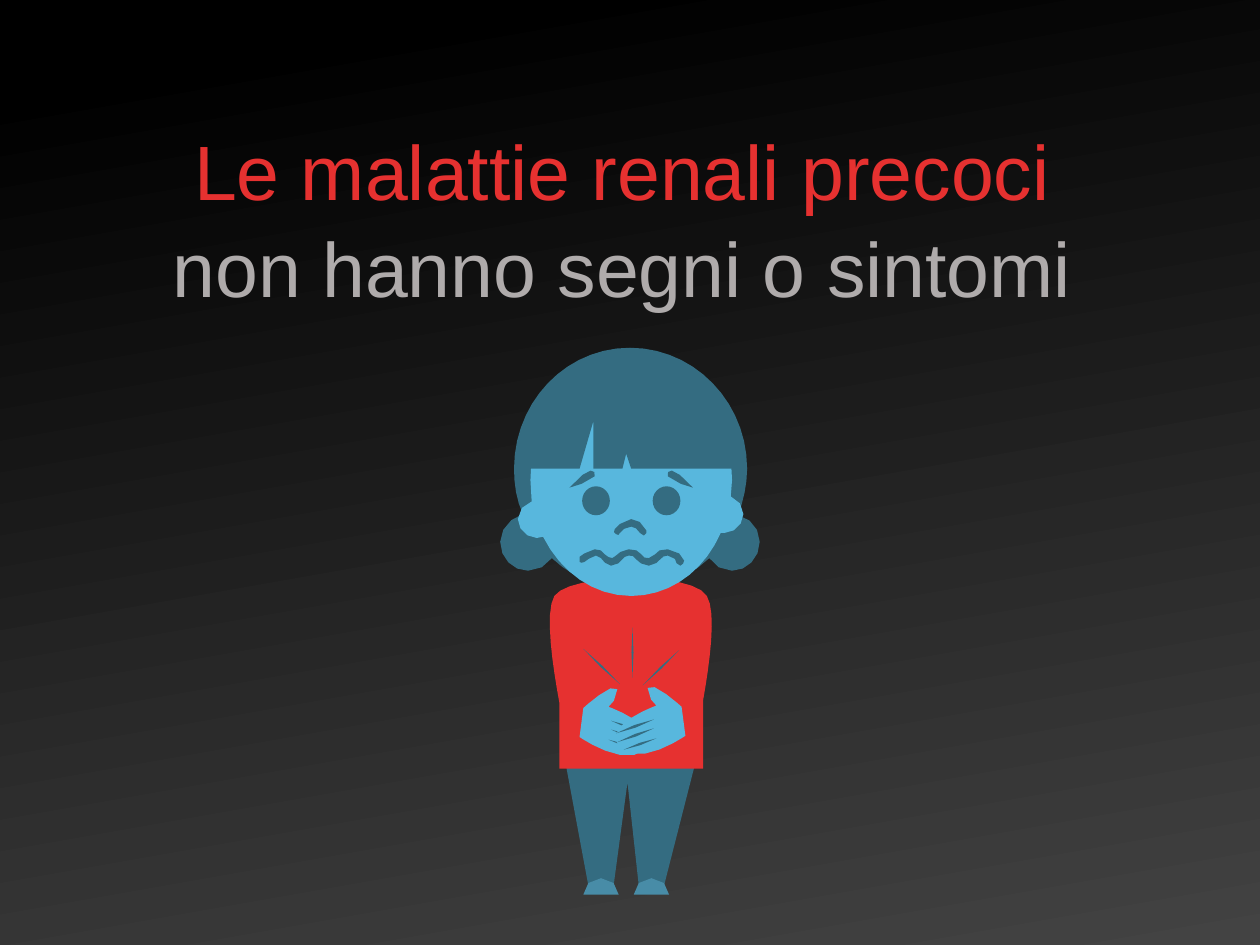
from math import ceil, dist

from pptx import Presentation
from pptx.dml.color import RGBColor
from pptx.enum.shapes import MSO_SHAPE
from pptx.enum.text import MSO_ANCHOR, MSO_AUTO_SIZE, PP_ALIGN
from pptx.util import Inches, Pt

BLACK = RGBColor(0x00, 0x00, 0x00)
CHARCOAL = RGBColor(0x43, 0x43, 0x43)
RED = RGBColor(0xE6, 0x31, 0x30)
GREY = RGBColor(0xAF, 0xAB, 0xAB)
TEAL = RGBColor(0x34, 0x6C, 0x81)
SKY = RGBColor(0x58, 0xB7, 0xDD)
STEEL = RGBColor(0x48, 0x8C, 0xA7)

TITLE = [("Le malattie renali precoci", RED), ("non hanno segni o sintomi", GREY)]

# Outlines in inches: a start point, then lines (x, y) or Bezier curves (x1, y1, x2, y2, x, y)
HAIR = [(5.86, 4.09), (5.9, 3.97, 5.93, 3.85, 5.93, 3.72), (5.93, 3.19, 5.51, 2.76, 5, 2.76),
        (4.49, 2.76, 4.08, 3.19, 4.08, 3.72), (4.08, 3.85, 4.1, 3.97, 4.15, 4.08),
        (4.05, 4.11, 3.97, 4.2, 3.97, 4.3), (3.97, 4.43, 4.07, 4.53, 4.19, 4.53),
        (4.27, 4.53, 4.34, 4.49, 4.38, 4.43), (4.54, 4.58, 4.76, 4.68, 5, 4.68),
        (5.24, 4.68, 5.46, 4.59, 5.63, 4.43), (5.67, 4.49, 5.73, 4.53, 5.81, 4.53),
        (5.93, 4.53, 6.03, 4.43, 6.03, 4.3), (6.03, 4.2, 5.96, 4.11, 5.86, 4.09)]
LEGS = [(4.48, 6.01), (4.67, 7.03), (4.87, 7.03), (4.98, 6.21), (5.07, 7.03), (5.27, 7.03),
        (5.53, 6.01)]
SHIRT = [(5.61, 4.73), (5.49, 4.53, 4.52, 4.55, 4.4, 4.73), (4.32, 4.86, 4.39, 5.31, 4.44, 5.58),
         (4.44, 6.1), (5.58, 6.1), (5.58, 5.56), (5.63, 5.28, 5.69, 4.86, 5.61, 4.73)]
FACE = [(5.8, 3.94), (5.81, 3.81), (5.81, 3.3, 5.45, 2.88, 5.01, 2.88),
        (4.56, 2.88, 4.21, 3.3, 4.21, 3.81), (4.22, 3.98),
        (4.16, 4, 4.11, 4.05, 4.11, 4.12), (4.11, 4.2, 4.18, 4.27, 4.26, 4.27),
        (4.31, 4.26), (4.45, 4.54, 4.71, 4.73, 5.01, 4.73),
        (5.32, 4.73, 5.59, 4.53, 5.72, 4.23), (5.75, 4.23),
        (5.83, 4.23, 5.9, 4.16, 5.9, 4.08), (5.9, 4.02, 5.86, 3.96, 5.8, 3.94)]
BROW = [(4.52, 3.87), (4.52, 3.87, 4.71, 3.82, 4.72, 3.78), (4.73, 3.73, 4.69, 3.68, 4.52, 3.87)]
NOSE = [(5.11, 4.25), (5.08, 4.23), (5.06, 4.2, 5.04, 4.18, 5.01, 4.18),
        (4.97, 4.17, 4.93, 4.22, 4.92, 4.23), (4.92, 4.25, 4.9, 4.25, 4.89, 4.24),
        (4.87, 4.23, 4.87, 4.22, 4.88, 4.2), (4.88, 4.2, 4.94, 4.12, 5.01, 4.12),
        (5.06, 4.12, 5.1, 4.15, 5.13, 4.21), (5.14, 4.22, 5.13, 4.24, 5.11, 4.25)]
MOUTH = [(5.4, 4.49), (5.37, 4.47), (5.37, 4.46, 5.36, 4.41, 5.3, 4.41),
         (5.27, 4.41, 5.26, 4.42, 5.24, 4.44), (5.23, 4.46, 5.2, 4.48, 5.15, 4.49),
         (5.1, 4.49, 5.07, 4.46, 5.05, 4.44), (5.03, 4.42, 5.02, 4.4, 4.99, 4.41),
         (4.96, 4.41, 4.95, 4.43, 4.94, 4.44), (4.92, 4.46, 4.9, 4.49, 4.85, 4.49),
         (4.81, 4.48, 4.79, 4.46, 4.77, 4.43), (4.73, 4.41),
         (4.69, 4.42, 4.65, 4.45, 4.64, 4.46), (4.62, 4.47, 4.61, 4.47, 4.6, 4.46),
         (4.6, 4.42), (4.6, 4.42, 4.66, 4.37, 4.72, 4.36),
         (4.76, 4.35, 4.78, 4.38, 4.8, 4.4), (4.82, 4.42, 4.84, 4.43, 4.86, 4.43),
         (4.89, 4.41), (4.91, 4.39, 4.93, 4.37, 4.99, 4.36),
         (5.04, 4.35, 5.07, 4.38, 5.09, 4.4), (5.11, 4.42, 5.12, 4.44, 5.15, 4.43),
         (5.2, 4.4), (5.22, 4.38, 5.24, 4.35, 5.3, 4.36),
         (5.38, 4.36, 5.42, 4.42, 5.43, 4.45), (5.43, 4.47, 5.42, 4.48, 5.4, 4.49)]
SHOE = [(4.77, 6.97), (4.69, 6.97, 4.63, 7.03, 4.63, 7.1), (4.91, 7.1),
        (4.91, 7.03, 4.85, 6.97, 4.77, 6.97)]
HAND = [(4.63, 5.62), (4.6, 5.85), (4.6, 5.85, 4.97, 6.11, 5.13, 5.94),
        (5.28, 5.77, 4.83, 5.61, 4.83, 5.61), (4.83, 5.61, 4.92, 5.53, 4.9, 5.47),
        (4.87, 5.4, 4.63, 5.62, 4.63, 5.62)]
FRINGE = [(4.08, 3.72), (4.6, 3.72), (4.71, 3.34), (4.71, 3.72), (4.94, 3.72), (4.97, 3.6),
          (5.01, 3.72), (5.93, 3.72), (5.93, 3.72, 5.76, 2.89, 5.03, 2.84),
          (4.3, 2.8, 4.08, 3.72, 4.08, 3.72)]
FINGERS = [(4.85, 5.72, 5.15, 5.83), (4.85, 5.79, 5.14, 5.9), (4.83, 5.87, 5.09, 5.96)]
PAIN_MARKS = [(4.63, 5.15, 4.92, 5.43), (5.02, 4.98, 5.02, 5.38), (5.39, 5.16, 5.1, 5.44)]
EYES = [(5.18, 3.86), (4.62, 3.86)]
EYE_SIZE = (0.22, 0.23)
BROW_AXIS, HAND_AXIS = 5.01, 5.02
STEP_LENGTH = 0.12


def move(outline, dx=0, dy=0, axis=None):
    """Shift an outline, after mirroring it about a vertical axis if one is given."""
    def place(i, value):
        if i % 2:
            return value + dy
        return (value if axis is None else 2 * axis - value) + dx
    return [tuple(place(i, v) for i, v in enumerate(part)) for part in outline]


def sliver(x1, y1, x2, y2, bulge=0.035):
    """Thin pointed stroke between two points."""
    side_x, side_y = -(y2 - y1) * bulge, (x2 - x1) * bulge
    mid_x, mid_y = (x1 + x2) / 2, (y1 + y2) / 2
    return [(x1, y1), (mid_x + side_x, mid_y + side_y), (x2, y2), (mid_x - side_x, mid_y - side_y)]


def trace(outline):
    """Turn lines and Bezier curves into points, with more of them on longer curves."""
    points = [outline[0]]
    for part in outline[1:]:
        if len(part) == 2:
            points.append(part)
            continue
        corners = [points[-1], part[:2], part[2:4], part[4:]]
        steps = max(2, ceil(sum(map(dist, corners, corners[1:])) / STEP_LENGTH))
        for step in range(1, steps + 1):
            t = step / steps
            weights = ((1 - t) ** 3, 3 * t * (1 - t) ** 2, 3 * t * t * (1 - t), t ** 3)
            points.append(tuple(sum(w * c[i] for w, c in zip(weights, corners)) for i in (0, 1)))
    return points


def paint(shape, color):
    shape.shadow.inherit = False
    shape.fill.solid()
    shape.fill.fore_color.rgb = color
    shape.line.fill.background()


def draw(figure, color, *outlines):
    for outline in outlines:
        start, *rest = [(Inches(x), Inches(y)) for x, y in trace(outline)]
        builder = figure.shapes.build_freeform(*start)
        builder.add_line_segments(rest, close=True)
        paint(builder.convert_to_shape(), color)


def set_background(page):
    fill = page.background.fill
    fill.gradient()
    fill.gradient_angle = 280
    for stop, (position, color) in zip(fill.gradient_stops, [(0.08, BLACK), (1, CHARCOAL)]):
        stop.position = position
        stop.color.rgb = color


def add_title(page):
    box = page.shapes.title
    box.left, box.top, box.width, box.height = map(Inches, (0.13, 0.89, 9.62, 1.58))
    frame = box.text_frame
    frame.word_wrap = True
    frame.auto_size = MSO_AUTO_SIZE.SHAPE_TO_FIT_TEXT
    frame.vertical_anchor = MSO_ANCHOR.TOP
    para = frame.paragraphs[0]
    para.alignment = PP_ALIGN.CENTER
    para.line_spacing = 1.05
    para.font.name, para.font.size = "Arial", Pt(44)
    for i, (text, color) in enumerate(TITLE):
        if i:
            para.add_line_break()
        span = para.add_run()
        span.text = text
        span.font.color.rgb = color


def add_girl(page):
    girl = page.shapes.add_group_shape()
    fingers = [sliver(*ends) for ends in FINGERS]
    draw(girl, TEAL, HAIR, LEGS)
    draw(girl, RED, SHIRT)
    draw(girl, SKY, FACE)
    for left, top in EYES:
        eye = girl.shapes.add_shape(MSO_SHAPE.OVAL, *map(Inches, (left, top, *EYE_SIZE)))
        paint(eye, TEAL)
    draw(girl, TEAL, move(BROW, axis=BROW_AXIS), BROW, NOSE, MOUTH)
    draw(girl, STEEL, SHOE, move(SHOE, dx=0.4))
    draw(girl, SKY, HAND)
    draw(girl, TEAL, *fingers)
    draw(girl, SKY, move(HAND, dy=-0.01, axis=HAND_AXIS))
    draw(girl, TEAL, *[move(finger, dy=-0.01, axis=HAND_AXIS) for finger in fingers])
    draw(girl, TEAL, *[sliver(*ends, bulge=0.02) for ends in PAIN_MARKS], FRINGE)


def main():
    deck = Presentation()
    deck.slide_width, deck.slide_height = Inches(10), Inches(7.5)
    page = deck.slides.add_slide(deck.slide_layouts[5])
    set_background(page)
    add_title(page)
    add_girl(page)
    deck.save("out.pptx")


if __name__ == "__main__":
    main()
